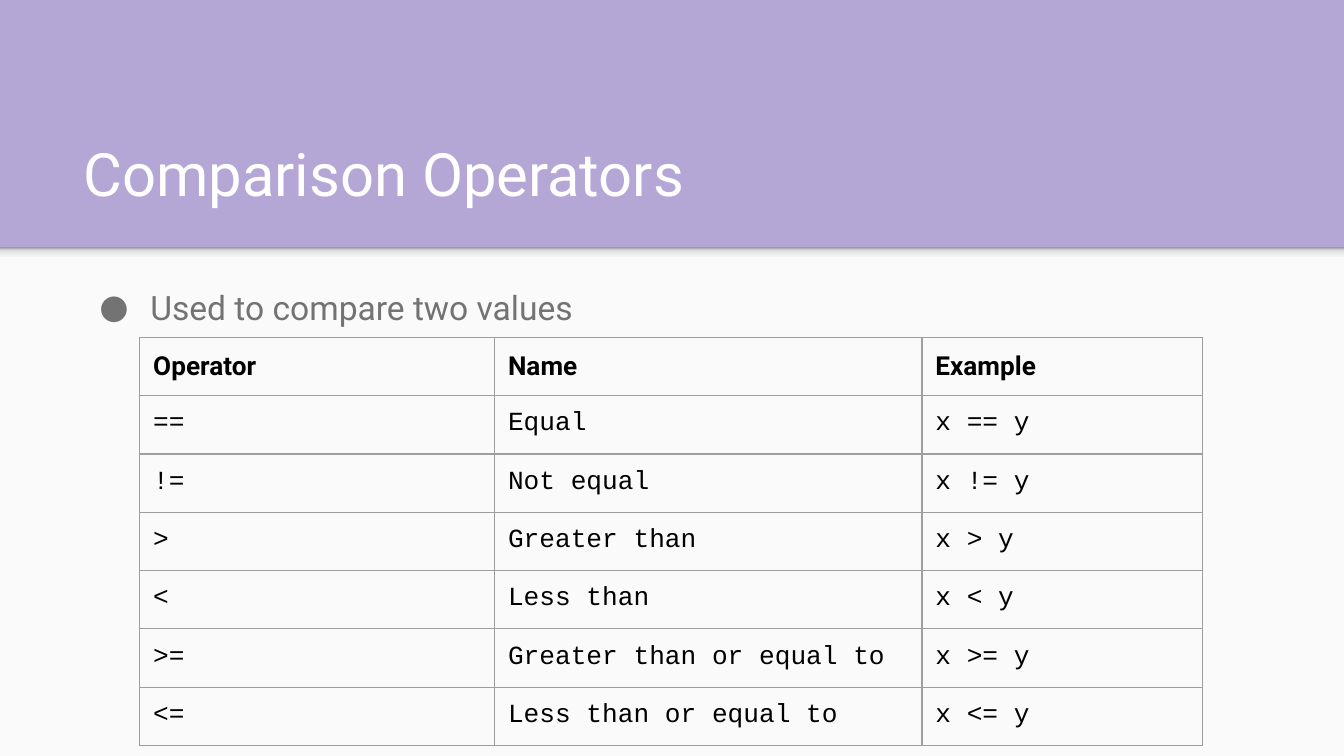
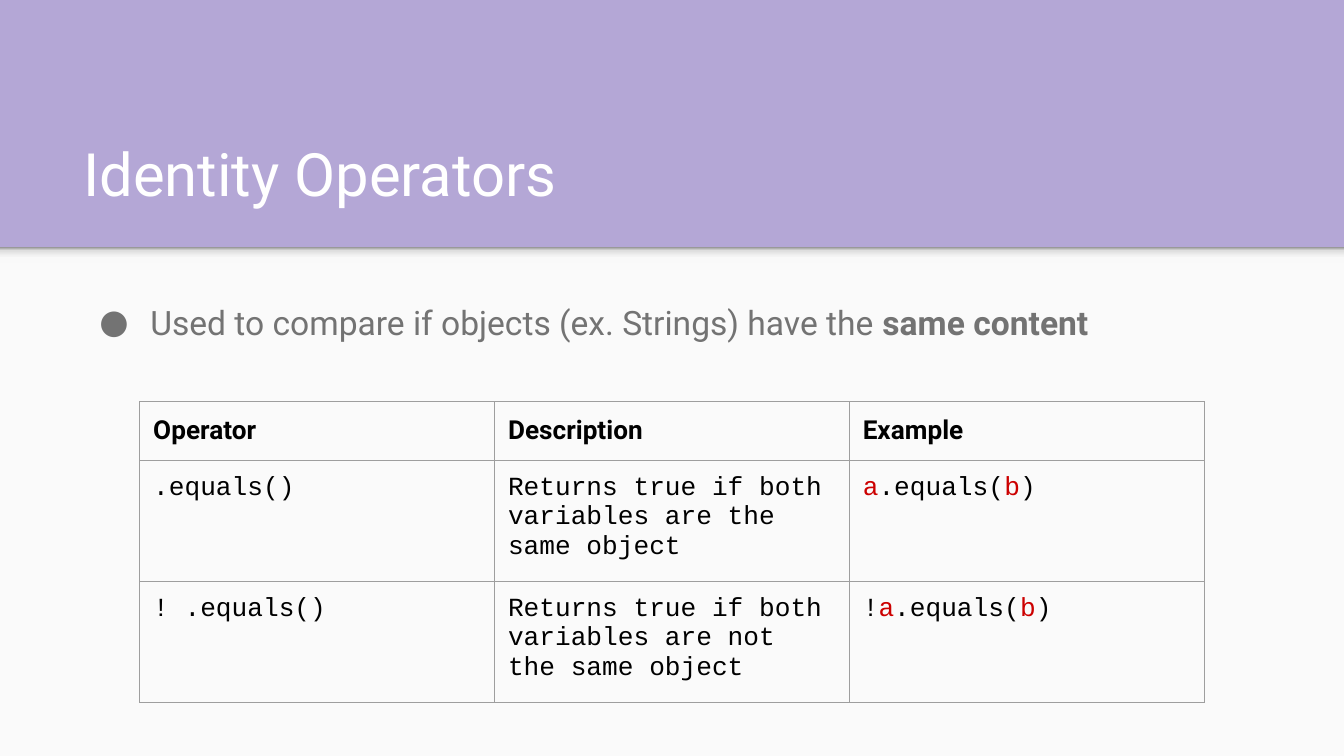
from lxml.etree import SubElement
from pptx import Presentation
from pptx.dml.color import RGBColor
from pptx.enum.shapes import MSO_SHAPE
from pptx.enum.text import MSO_ANCHOR, MSO_AUTO_SIZE, PP_ALIGN
from pptx.oxml import parse_xml
from pptx.oxml.ns import nsdecls, qn
from pptx.util import Inches, Pt

WIDTH = 10
HEIGHT = WIDTH * 9 / 16
MARGIN = 0.1
BAND_BOTTOM = 1.84
TEXT_LEFT, TEXT_WIDTH = 0.52, 8.99
TABLE_LEFT, TABLE_FRAME = 1.04, 3.28
ROW = 0.42
COLORS = {
    "band": "B4A7D6",
    "paper": "FAFAFA",
    "title": "FFFFFF",
    "body": "737373",
    "cell": "000000",
    "variable": "CC0000",
    "border": "9E9E9E",
}
SHADOW_STOPS = [(0, "F9F9F9"), (36, "F9F9F9"), (80, "DEDEDE"), (100, "999999")]
SANS, MONO = "Roboto", "Courier New"

COMPARISONS = [
    ("==", "Equal"),
    ("!=", "Not equal"),
    (">", "Greater than"),
    ("<", "Less than"),
    (">=", "Greater than or equal to"),
    ("<=", "Less than or equal to"),
]
EQUALS_CALL = [("a", "variable"), (".equals(", "cell"), ("b", "variable"), (")", "cell")]


def color(name):
    return RGBColor.from_string(COLORS[name])


def add_span(para, text, size, font, color_name, bold=False):
    span = para.add_run()
    span.text = text
    span.font.size = Pt(size)
    span.font.name = font
    span.font.bold = bold
    span.font.color.rgb = color(color_name)


def set_margins(frame):
    frame.margin_left = frame.margin_right = Inches(MARGIN)
    frame.margin_top = frame.margin_bottom = Inches(MARGIN)


def add_panel(page, top, height):
    panel = page.shapes.add_shape(
        MSO_SHAPE.RECTANGLE, 0, Inches(top), Inches(WIDTH), Inches(height))
    panel.shadow.inherit = False
    panel.line.fill.background()
    return panel


# Purple band, pale lower panel and the soft shadow between them
def add_backdrop(page):
    page.background.fill.solid()
    page.background.fill.fore_color.rgb = color("band")
    paper = add_panel(page, BAND_BOTTOM, HEIGHT - BAND_BOTTOM)
    paper.fill.solid()
    paper.fill.fore_color.rgb = color("paper")

    shade = add_panel(page, BAND_BOTTOM, 0.12)
    shade.fill.gradient()
    shade.fill.gradient_angle = 90
    stops = shade.element.spPr.find(qn("a:gradFill")).find(qn("a:gsLst"))
    for stop in list(stops):
        stops.remove(stop)
    for share, hex_value in SHADOW_STOPS:
        stop = SubElement(stops, qn("a:gs"), pos=str(share * 1000))
        SubElement(stop, qn("a:srgbClr"), val=hex_value)


def add_title(page, text):
    title = page.shapes.title
    title.left, title.top = Inches(TEXT_LEFT), Inches(0.81)
    title.width, title.height = Inches(TEXT_WIDTH), Inches(0.84)
    frame = title.text_frame
    set_margins(frame)
    frame.auto_size = MSO_AUTO_SIZE.NONE
    frame.vertical_anchor = MSO_ANCHOR.BOTTOM
    para = frame.paragraphs[0]
    para.alignment = PP_ALIGN.LEFT
    add_span(para, text, 32, SANS, "title")


# Bulleted statement; spans are (text, bold) pairs
def add_bullet(page, top, height, spans):
    box = page.shapes.add_textbox(
        Inches(TEXT_LEFT), Inches(top), Inches(TEXT_WIDTH), Inches(height))
    frame = box.text_frame
    frame.word_wrap = True
    set_margins(frame)
    para = frame.paragraphs[0]
    para.line_spacing = 1.15
    properties = para._p.get_or_add_pPr()
    properties.set("marL", str(Inches(0.5)))
    properties.set("indent", str(Inches(-0.38)))
    bullet_color = SubElement(properties, qn("a:buClr"))
    SubElement(bullet_color, qn("a:srgbClr"), val=COLORS["body"])
    SubElement(properties, qn("a:buFont"), typeface=SANS)
    SubElement(properties, qn("a:buChar"), char="●")
    for text, bold in spans:
        add_span(para, text, 18, SANS, "body", bold)


def outline_cell(cell):
    properties = cell._tc.get_or_add_tcPr()
    for index, side in enumerate(("lnL", "lnR", "lnT", "lnB")):
        properties.insert(index, parse_xml(
            f'<a:{side} {nsdecls("a")} w="{Pt(0.75)}"><a:solidFill>'
            f'<a:srgbClr val="{COLORS["border"]}"/></a:solidFill></a:{side}>'))


# Header row plus code rows; a cell is a string or a list of (text, color)
def add_operator_table(page, top, columns, heights, rows):
    holder = page.shapes.add_table(
        len(rows), len(columns), Inches(TABLE_LEFT), Inches(top),
        Inches(TABLE_FRAME), Inches(TABLE_FRAME))
    table = holder.table
    table.first_row = table.horz_banding = False
    for column, width in zip(table.columns, columns):
        column.width = Inches(width)
    for index, (row, height, contents) in enumerate(zip(table.rows, heights, rows)):
        row.height = Inches(height)
        header = index == 0
        for cell, content in zip(row.cells, contents):
            cell.fill.background()
            outline_cell(cell)
            set_margins(cell)
            spans = [(content, "cell")] if isinstance(content, str) else content
            for text, color_name in spans:
                add_span(cell.text_frame.paragraphs[0], text, 14,
                         SANS if header else MONO, color_name, header)
    # Rows grow to fit their text inside this fixed frame
    holder.width = holder.height = Inches(TABLE_FRAME)


def add_page(deck, title):
    page = deck.slides.add_slide(deck.slide_layouts[5])
    add_backdrop(page)
    add_title(page, title)
    return page


def add_comparison_page(deck):
    page = add_page(deck, "Comparison Operators")
    add_bullet(page, 1.99, 0.41, [("Used to compare two values", False)])
    rows = [("Operator", "Name", "Example")]
    rows += [(sign, name, f"x {sign} y") for sign, name in COMPARISONS]
    add_operator_table(page, 2.51, [2.64, 3.18, 2.09], [ROW] * len(rows), rows)


def add_identity_page(deck):
    page = add_page(deck, "Identity Operators")
    add_bullet(page, 2.1, 0.84, [
        ("Used to compare if objects (ex. Strings) have the ", False),
        ("same content", True),
    ])
    rows = [
        ("Operator", "Description", "Example"),
        (".equals()", "Returns true if both variables are the same object",
         EQUALS_CALL),
        ("! .equals()", "Returns true if both variables are not the same object",
         [("!", "cell")] + EQUALS_CALL),
    ]
    add_operator_table(page, 2.99, [2.64] * 3, [0.11, ROW, ROW], rows)


def main():
    deck = Presentation()
    deck.slide_width, deck.slide_height = Inches(WIDTH), Inches(HEIGHT)
    add_comparison_page(deck)
    add_identity_page(deck)
    deck.save("out.pptx")


if __name__ == "__main__":
    main()
